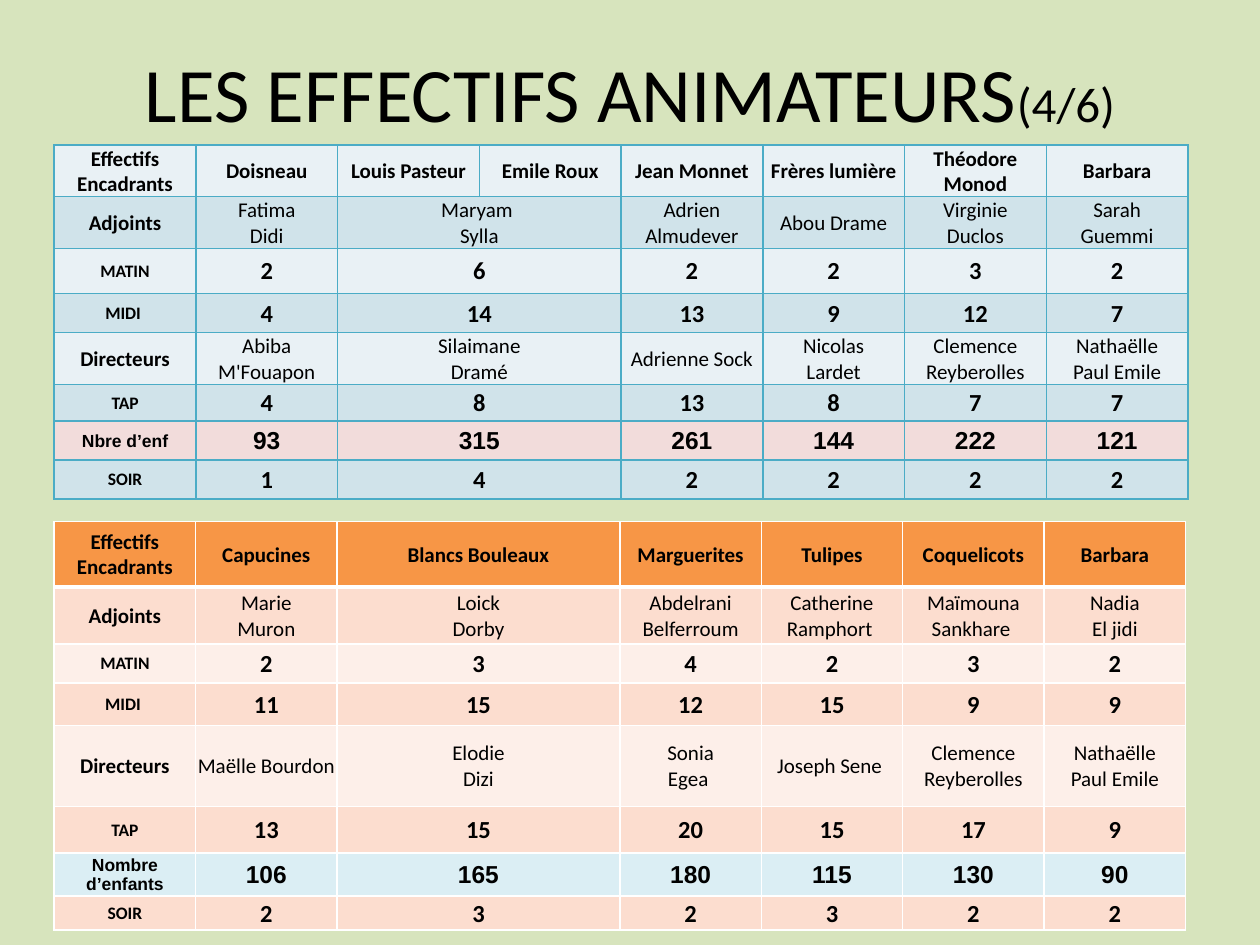
from copy import deepcopy
from dataclasses import dataclass

from lxml.etree import SubElement
from pptx import Presentation
from pptx.dml.color import RGBColor
from pptx.enum.text import MSO_ANCHOR, PP_ALIGN
from pptx.oxml.ns import qn
from pptx.util import Inches, Pt


@dataclass(frozen=True)
class Theme:
    page: str = "D7E4BD"
    ink: str = "000000"
    font: str = "Calibri"
    kids_font: str = "Arial"
    title: int = 44
    pager: int = 28
    name: int = 12
    tag: int = 10
    count: int = 14


THEME = Theme()
# Row kind: label size, value size, bold values, font
KINDS = {
    "head": (THEME.name, THEME.name, True, THEME.font),
    "staff": (THEME.name, THEME.name, False, THEME.font),
    "count": (THEME.tag, THEME.count, True, THEME.font),
    "kids": (THEME.tag, THEME.count, True, THEME.kids_font),
}

TABLES = [
    {
        "top": 1.15, "width": 9, "cols": [1] * 8, "line": "4BACC6", "rule": 1,
        "fills": {"head": "E9F1F5", "kids": "F2DCDB", "dark": "D0E3EA", "light": "E9F1F5"},
        "rows": [
            (0.41, "head", ["Effectifs Encadrants", "Doisneau", "Louis Pasteur", "Emile Roux",
                            "Jean Monnet", "Frères lumière", "Théodore Monod", "Barbara"]),
            (0.41, "staff", ["Adjoints", "Fatima\nDidi", "Maryam \nSylla", "Adrien Almudever",
                             "Abou Drame", "Virginie\nDuclos", "Sarah\nGuemmi"]),
            (0.36, "count", ["MATIN", 2, 6, 2, 2, 3, 2]),
            (0.31, "count", ["MIDI ", 4, 14, 13, 9, 12, 7]),
            (0.41, "staff", ["Directeurs", "Abiba M'Fouapon", "Silaimane\nDramé", "Adrienne Sock",
                             "Nicolas\nLardet", "Clemence\nReyberolles", "Nathaëlle\nPaul Emile"]),
            (0.29, "count", ["TAP", 4, 8, 13, 8, 7, 7]),
            (0.31, "kids", ["Nbre d’enf", 93, 315, 261, 144, 222, 121]),
            (0.31, "count", ["SOIR", 1, 4, 2, 2, 2, 2]),
        ],
    },
    {
        "top": 4.14, "width": 8.98, "cols": [1, 1, 2, 1, 1, 1, 1], "line": "FFFFFF", "rule": 3,
        "fills": {"head": "F79646", "kids": "DBEEF4", "dark": "FCDDCF", "light": "FDEFE9"},
        "rows": [
            (0.52, "head", ["Effectifs Encadrants", "Capucines", "Blancs Bouleaux", "Marguerites",
                            "Tulipes", "Coquelicots", "Barbara"]),
            (0.45, "staff", ["Adjoints", "Marie\nMuron", "Loick\nDorby", "Abdelrani Belferroum",
                             "Catherine\nRamphort ", "Maïmouna\nSankhare ", "Nadia\nEl jidi"]),
            (0.31, "count", ["MATIN", 2, 3, 4, 2, 3, 2]),
            (0.34, "count", ["MIDI ", 11, 15, 12, 15, 9, 9]),
            (0.64, "staff", ["Directeurs", "Maëlle Bourdon", "Elodie\nDizi", "Sonia\nEgea ",
                             "Joseph Sene ", "Clemence\nReyberolles", "Nathaëlle\nPaul Emile"]),
            (0.37, "count", ["TAP", 13, 15, 20, 15, 17, 9]),
            (0.32, "kids", ["Nombre d’enfants", 106, 165, 180, 115, 130, 90]),
            (0.27, "count", ["SOIR", 2, 3, 2, 3, 2, 2]),
        ],
    },
]


def style(run, size, bold=False, font=THEME.font):
    for key, value in {"size": Pt(size), "bold": bold, "name": font}.items():
        setattr(run.font, key, value)
    run.font.color.rgb = RGBColor.from_string(THEME.ink)


def border(cell, color, widths):
    """Draw the cell's edges; widths maps L, R, T and B to points."""
    props = cell._tc.get_or_add_tcPr()
    for spot, (side, width) in enumerate(widths.items()):
        line = SubElement(props, qn(f"a:ln{side}"), w=str(Pt(width)))
        SubElement(SubElement(line, qn("a:solidFill")), qn("a:srgbClr"), val=color)
        props.insert(spot, line)


deck = Presentation()
deck.slide_width, deck.slide_height = Inches(10), Inches(7.5)
slide = deck.slides.add_slide(deck.slide_layouts[6])
slide.background.fill.solid()
slide.background.fill.fore_color.rgb = RGBColor.from_string(THEME.page)

frame = slide.shapes.add_textbox(Inches(0.5), Inches(0.3), Inches(9), Inches(0.85)).text_frame
frame.word_wrap = True
frame.vertical_anchor = MSO_ANCHOR.MIDDLE
title = frame.paragraphs[0]
title.alignment = PP_ALIGN.CENTER
for text, size in [("LES EFFECTIFS ANIMATEURS", THEME.title), ("(4/6)", THEME.pager)]:
    run = title.add_run()
    run.text = text
    style(run, size)

CELL = {
    "margin_left": Inches(0.01), "margin_right": Inches(0.01),
    "margin_top": Inches(0.01), "margin_bottom": 0,
    "vertical_anchor": MSO_ANCHOR.MIDDLE,
}

for data in TABLES:
    rows, cols = data["rows"], data["cols"]
    high = sum(row[0] for row in rows)
    table = slide.shapes.add_table(len(rows), len(cols), Inches(0.43), Inches(data["top"]),
                                   Inches(data["width"]), Inches(high)).table
    table.first_row = table.horz_banding = False
    for col, share in zip(table.columns, cols):
        col.width = Inches(data["width"] * share / sum(cols))

    for r, (height, kind, texts) in enumerate(rows):
        table.rows[r].height = Inches(height)
        label, size, bold, font = KINDS[kind]
        tint = data["fills"].get(kind, data["fills"]["dark" if r % 2 else "light"])
        edges = {"L": 1, "R": 1, "T": data["rule"] if r == 1 else 1,
                 "B": data["rule"] if r == 0 else 1}
        spots = list(range(len(cols)))
        if len(texts) < len(cols):
            table.cell(r, 2).merge(table.cell(r, 3))
            spots.remove(3)

        for c in range(len(cols)):
            cell = table.cell(r, c)
            cell.fill.solid()
            cell.fill.fore_color.rgb = RGBColor.from_string(tint)
            border(cell, data["line"], edges)
            for key, value in CELL.items():
                setattr(cell, key, value)

        for c, text in zip(spots, texts):
            para = table.cell(r, c).text_frame.paragraphs[0]
            para.text = str(text)
            para.alignment = PP_ALIGN.CENTER
            for run in para.runs:
                style(run, size if c else label, bold or c == 0, font)
            for gap in para._p.findall(qn("a:br")):
                gap.insert(0, deepcopy(para.runs[0]._r.rPr))

deck.save("out.pptx")
